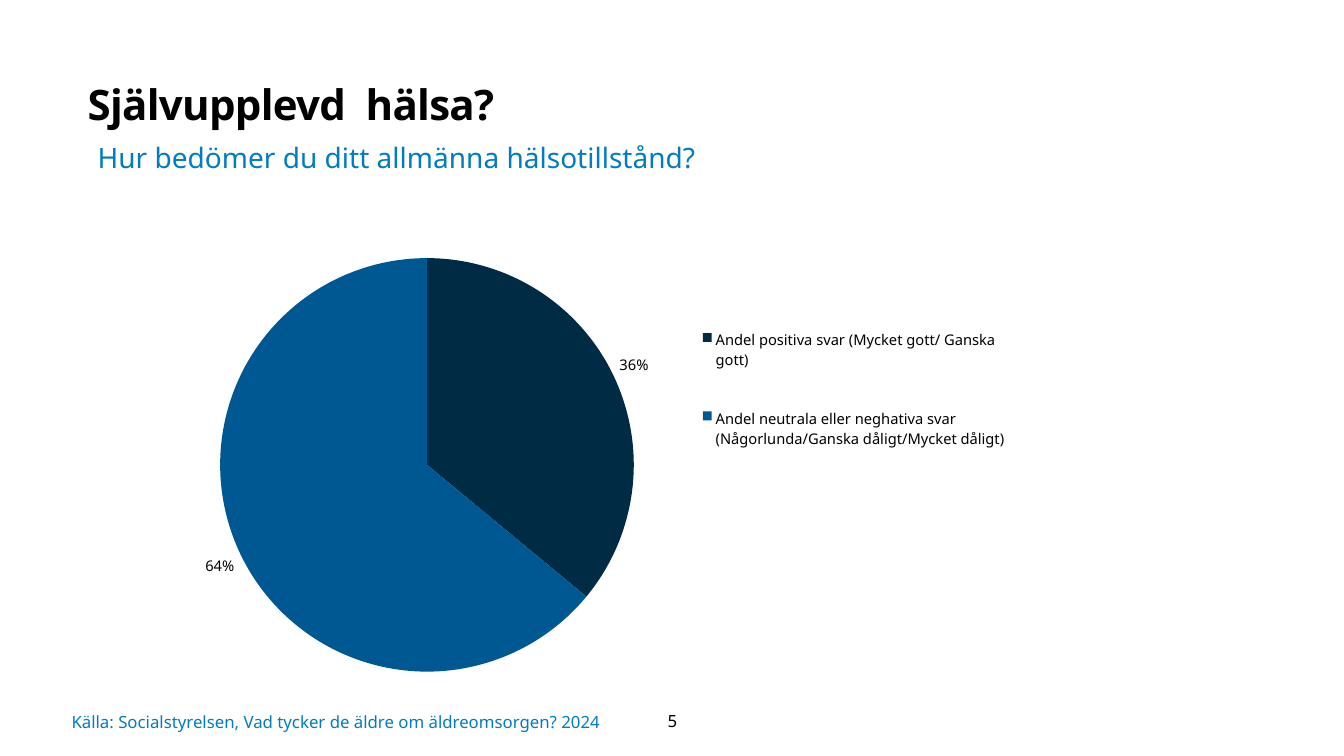
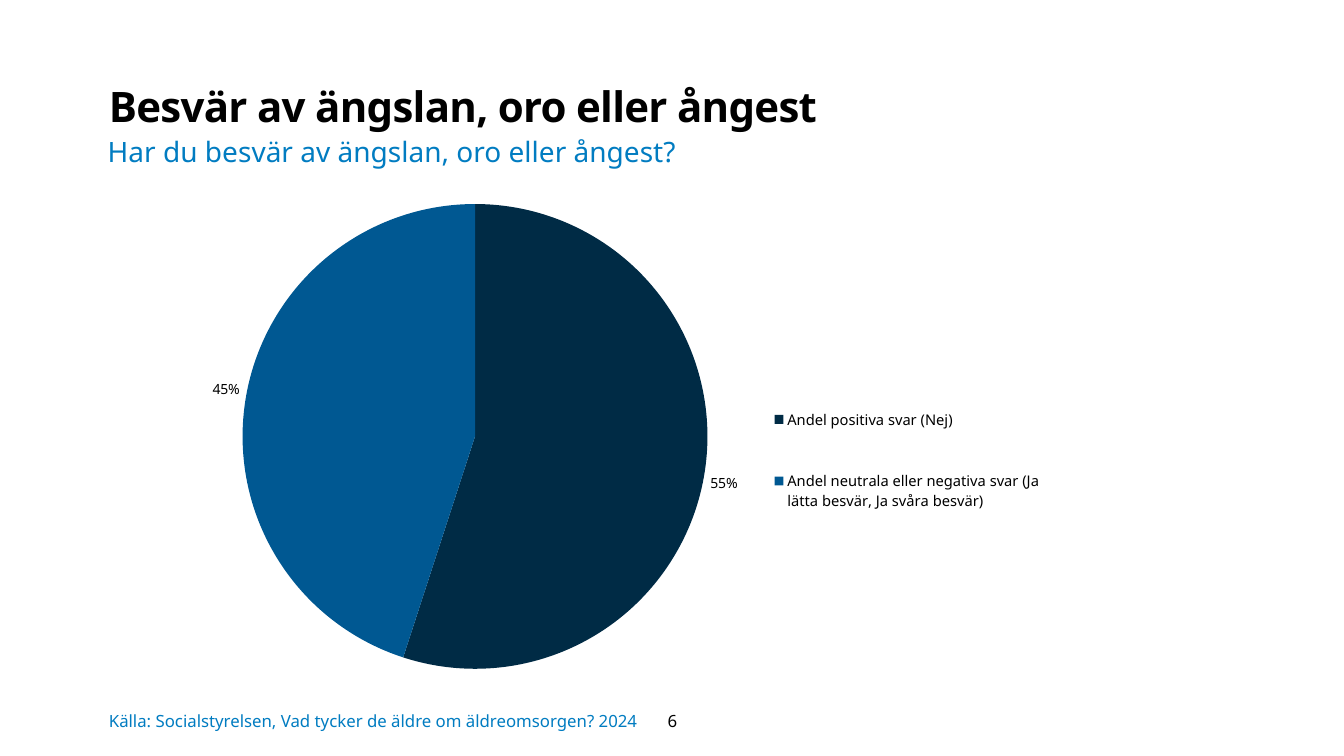
from dataclasses import dataclass

from lxml import etree
from pptx import Presentation
from pptx.chart.data import CategoryChartData
from pptx.dml.color import RGBColor
from pptx.enum.chart import XL_CHART_TYPE as ChartType
from pptx.enum.chart import XL_LABEL_POSITION as LabelPosition
from pptx.enum.chart import XL_LEGEND_POSITION as LegendPosition
from pptx.enum.text import MSO_ANCHOR as Anchor
from pptx.enum.text import MSO_AUTO_SIZE as AutoSize
from pptx.enum.text import PP_ALIGN as Align
from pptx.oxml.ns import qn
from pptx.util import Inches, Pt


@dataclass(frozen=True)
class Theme:
    font: str = "Noto Sans"
    ink: str = "000000"
    accent: str = "017CC1"
    slices: tuple = ("002B45", "005892")
    title: float = 30
    subtitle: float = 20
    footer: float = 12
    legend: float = 10.5
    chart: float = 10


THEME = Theme()
SOURCE = "Källa: Socialstyrelsen, Vad tycker de äldre om äldreomsorgen? 2024"
NUMBER_BOX = (6.16, 6.95, 1.02, 0.4)
DEFAULT_INSETS = (0.1, 0.05, 0.1, 0.05)

# Boxes are left, top, width, height in inches; plot and legend are chart fractions.
SLIDES = [
    {
        "title": "Självupplevd  hälsa?",
        "title_box": (0.87, 0.73, 9.83, 0.61),
        "question": "Hur bedömer du ditt allmänna hälsotillstånd?",
        "question_box": (0.87, 1.34, 7.88, 0.44),
        "answers": {
            "Andel positiva svar (Mycket gott/ Ganska gott)": 36,
            "Andel neutrala eller neghativa svar (Någorlunda/Ganska dåligt/Mycket dåligt)": 64,
        },
        "chart_box": (1.66, 2.12, 8.73, 4.84),
        "plot": (0.06, 0.09, 0.47, 0.85),
        "legend": (0.6, 0.16, 0.36, 0.4),
        "label_size": THEME.legend,
        "source_box": (0.71, 6.95, 5.45, 0.42),
        "number": 5,
    },
    {
        "title": "Besvär av ängslan, oro eller ångest",
        "title_box": (1.08, 0.75, 9.74, 0.54),
        "question": "Har du besvär av ängslan, oro eller ångest?",
        "question_box": (0.97, 1.29, 8.78, 0.44),
        "answers": {
            "Andel positiva svar (Nej)": 55,
            "Andel neutrala eller negativa svar (Ja lätta besvär, Ja svåra besvär)": 45,
        },
        "chart_box": (1.4, 1.71, 9.74, 5.24),
        "plot": (0.1, 0.06, 0.48, 0.88),
        "legend": (0.63, 0.37, 0.3, 0.35),
        "label_size": THEME.chart,
        "source_box": (1.08, 6.93, 8.79, 0.44),
        "number": 6,
    },
]


def style_font(font, size, color=THEME.ink, bold=False):
    font.name = THEME.font
    font.size = Pt(size)
    font.bold = bold
    font.color.rgb = RGBColor.from_string(color)


def add_text(slide, text, box, *, size, color=THEME.ink, bold=False, align=Align.LEFT,
             anchor=Anchor.TOP, insets=DEFAULT_INSETS, line_spacing=None,
             tracking=None, grow=False):
    frame = slide.shapes.add_textbox(*map(Inches, box)).text_frame
    frame.word_wrap = True
    frame.auto_size = AutoSize.SHAPE_TO_FIT_TEXT if grow else AutoSize.NONE
    frame.vertical_anchor = anchor
    (frame.margin_left, frame.margin_top,
     frame.margin_right, frame.margin_bottom) = map(Inches, insets)
    paragraph = frame.paragraphs[0]
    paragraph.alignment = align
    paragraph.line_spacing = line_spacing
    run = paragraph.add_run()
    run.text = text
    style_font(run.font, size, color, bold)
    if tracking is not None:
        run.font._element.set("spc", str(int(tracking * 100)))


def manual_layout(fractions, inner=False):
    layout = etree.Element(qn("c:layout"))
    manual = etree.SubElement(layout, qn("c:manualLayout"))
    settings = [("layoutTarget", "inner")] if inner else []
    settings += [("xMode", "edge"), ("yMode", "edge"), *zip("xywh", fractions)]
    for tag, value in settings:
        etree.SubElement(manual, qn(f"c:{tag}")).set("val", str(value))
    return layout


def add_pie(slide, answers, box, plot_area, legend_area, label_size):
    data = CategoryChartData()
    data.categories = list(answers)
    data.add_series("Series 1", list(answers.values()))
    chart = slide.shapes.add_chart(ChartType.PIE, *map(Inches, box), data).chart
    chart.has_title = False
    style_font(chart.font, THEME.chart)

    plot = chart.plots[0]
    plot.vary_by_categories = True
    for index, color in enumerate(THEME.slices):
        fill = plot.series[0].points[index].format.fill
        fill.solid()
        fill.fore_color.rgb = RGBColor.from_string(color)

    labels = plot.series[0].data_labels
    labels.show_value = False
    labels.show_percentage = True
    labels.number_format = "0%"
    labels.number_format_is_linked = False
    labels.position = LabelPosition.OUTSIDE_END
    style_font(labels.font, label_size)

    chart.has_legend = True
    legend = chart.legend
    legend.position = LegendPosition.RIGHT
    legend.include_in_layout = False
    style_font(legend.font, THEME.legend)

    plot_xml = chart._chartSpace.chart.plotArea
    for old in plot_xml.findall(qn("c:layout")):
        plot_xml.remove(old)
    plot_xml.insert(0, manual_layout(plot_area, inner=True))
    legend_xml = legend._element
    for old in legend_xml.findall(qn("c:layout")):
        legend_xml.remove(old)
    legend_xml.find(qn("c:legendPos")).addnext(manual_layout(legend_area))


def build_slide(deck, content):
    slide = deck.slides.add_slide(deck.slide_layouts[6])
    add_text(slide, content["title"], content["title_box"], size=THEME.title, bold=True,
             insets=(0, 0, 0.1, 0.05), line_spacing=1.1, tracking=-0.5)
    add_text(slide, content["question"], content["question_box"],
             size=THEME.subtitle, color=THEME.accent, grow=True)
    add_pie(slide, content["answers"], content["chart_box"], content["plot"],
            content["legend"], content["label_size"])
    add_text(slide, SOURCE, content["source_box"], size=THEME.footer,
             color=THEME.accent, anchor=Anchor.MIDDLE, insets=(0, 0, 0, 0))
    add_text(slide, str(content["number"]), NUMBER_BOX, size=THEME.footer,
             align=Align.CENTER, anchor=Anchor.MIDDLE)


def main():
    deck = Presentation()
    deck.slide_width, deck.slide_height = Inches(13.33), Inches(7.5)
    for content in SLIDES:
        build_slide(deck, content)
    deck.save("out.pptx")


if __name__ == "__main__":
    main()
